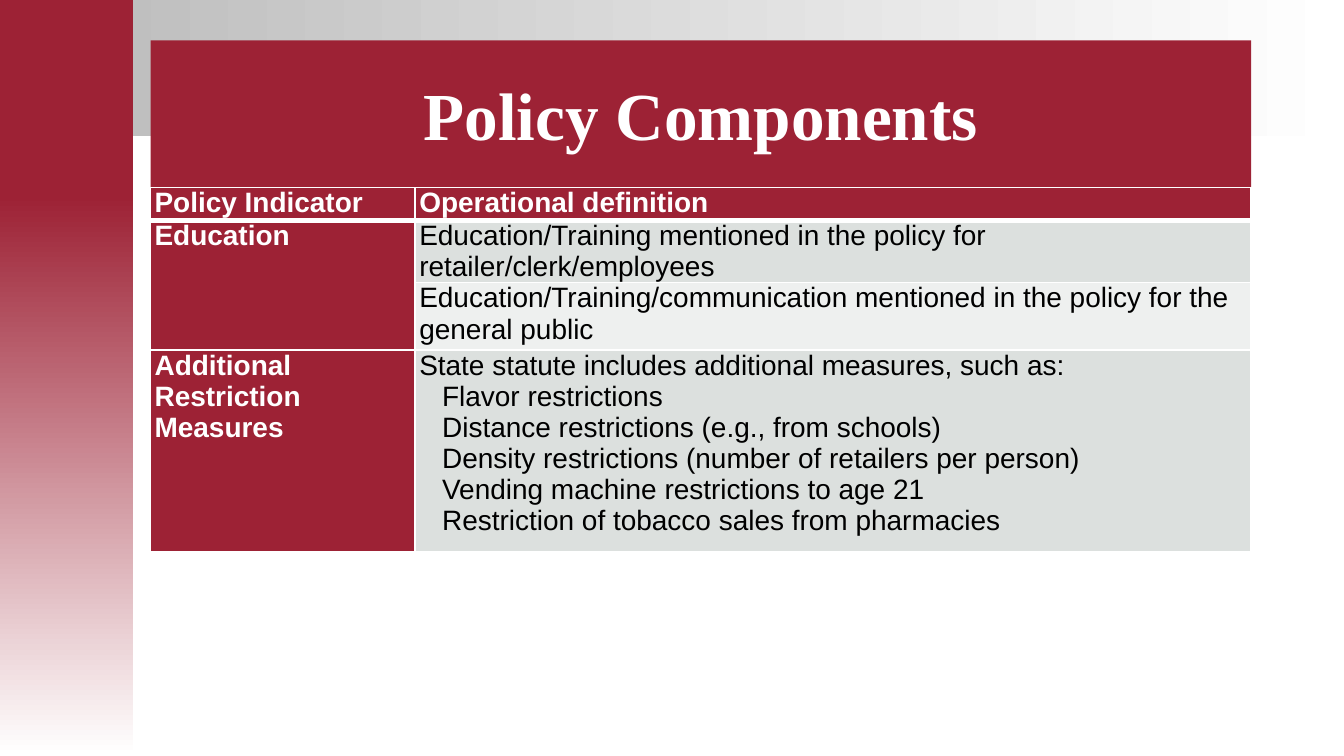
from lxml.etree import SubElement
from pptx import Presentation
from pptx.dml.color import RGBColor
from pptx.enum.shapes import MSO_SHAPE
from pptx.enum.text import MSO_ANCHOR, PP_ALIGN
from pptx.oxml.ns import qn
from pptx.util import Inches, Pt

COLORS = {
    "crimson": "9D2235",
    "silver": "BFBFBF",
    "white": "FFFFFF",
    "black": "000000",
    "band_dark": "DCE0DE",
    "band_light": "EEF0EF",
}


def rgb(name):
    return RGBColor.from_string(COLORS[name])


def add_border(cell, side, width):
    line = SubElement(cell._tc.get_or_add_tcPr(), qn(f"a:ln{side}"), w=str(Pt(width)))
    solid = SubElement(line, qn("a:solidFill"))
    SubElement(solid, qn("a:srgbClr"), val=COLORS["white"])


prs = Presentation()
prs.slide_width = Inches(10)
prs.slide_height = Inches(10) * 9 // 16  # widescreen
slide = prs.slides.add_slide(prs.slide_layouts[5])  # title only

# Background bands: left, top, width, height, start colour, start position, angle
bands = [
    (0.84, 0, 9.16, 1.01, "silver", 0, 0),
    (0, 0, 0.99, 5.62, "crimson", 0.26, 270),
]
for left, top, width, height, start_color, start, angle in bands:
    band = slide.shapes.add_shape(
        MSO_SHAPE.RECTANGLE, Inches(left), Inches(top), Inches(width), Inches(height))
    band.shadow.inherit = False
    band.line.fill.background()
    band.fill.gradient()
    band.fill.gradient_angle = angle
    first, last = band.fill.gradient_stops
    first.color.rgb, first.position = rgb(start_color), start
    last.color.rgb, last.position = rgb("white"), 1

# Policy table: fill and paragraphs of each cell, None where merged
rows = [
    [("crimson", ["Policy Indicator"]), ("crimson", ["Operational definition"])],
    [("crimson", ["Education"]),
     ("band_dark", ["Education/Training mentioned in the policy for retailer/clerk/employees"])],
    [None,
     ("band_light", ["Education/Training/communication mentioned in the policy for the general public"])],
    [("crimson", ["Additional Restriction Measures"]),
     ("band_dark", ["State statute includes additional measures, such as:",
                    "Flavor restrictions",
                    "Distance restrictions (e.g., from schools)",
                    "Density restrictions (number of retailers per person)",
                    "Vending machine restrictions to age 21",
                    "Restriction of tobacco sales from pharmacies"])],
]
policy_table = slide.shapes.add_table(
    4, 2, Inches(1.12), Inches(1.39), Inches(8.19), Inches(2.75)).table
for column, width in zip(policy_table.columns, (1.97, 6.22)):
    column.width = Inches(width)
for row, height in zip(policy_table.rows, (0.25, 0.25, 0.5, 1.5)):
    row.height = Inches(height)
policy_table.cell(1, 0).merge(policy_table.cell(2, 0))

for r, row in enumerate(rows):
    for c, content in enumerate(row):
        cell = policy_table.cell(r, c)
        for side in "LRTB":
            below_header = (r, side) in ((0, "B"), (1, "T"))
            add_border(cell, side, 3 if below_header else 1)
        if content is None:
            continue
        fill_color, lines = content
        cell.fill.solid()
        cell.fill.fore_color.rgb = rgb(fill_color)
        cell.margin_left = cell.margin_right = Inches(0.03)
        cell.margin_top = cell.margin_bottom = 0
        on_crimson = fill_color == "crimson"
        for i, text in enumerate(lines):
            paragraph = cell.text_frame.paragraphs[0] if i == 0 else cell.text_frame.add_paragraph()
            if i:  # measures listed under the opening line
                paragraph._p.get_or_add_pPr().set("marL", str(Inches(0.17)))
            run = paragraph.add_run()
            run.text = text
            run.font.name, run.font.size = "Arial", Pt(15)
            run.font.bold = on_crimson
            run.font.color.rgb = rgb("white" if on_crimson else "black")

# Title bar, in front of the bands
title = slide.shapes.title
slide.shapes._spTree.append(title._element)
title.left, title.top = Inches(1.12), Inches(0.3)
title.width, title.height = Inches(8.19), Inches(1.09)
title.fill.solid()
title.fill.fore_color.rgb = rgb("crimson")
title_frame = title.text_frame
title_frame.word_wrap = True
title_frame.vertical_anchor = MSO_ANCHOR.MIDDLE
title_frame.margin_left = title_frame.margin_right = Inches(0.07)
title_frame.margin_top = title_frame.margin_bottom = Inches(0.04)
title_frame.paragraphs[0].alignment = PP_ALIGN.CENTER
heading = title_frame.paragraphs[0].add_run()
heading.text = "Policy Components"
heading.font.name, heading.font.size, heading.font.bold = "Times New Roman", Pt(36), True
heading.font.color.rgb = rgb("white")

prs.save("out.pptx")
